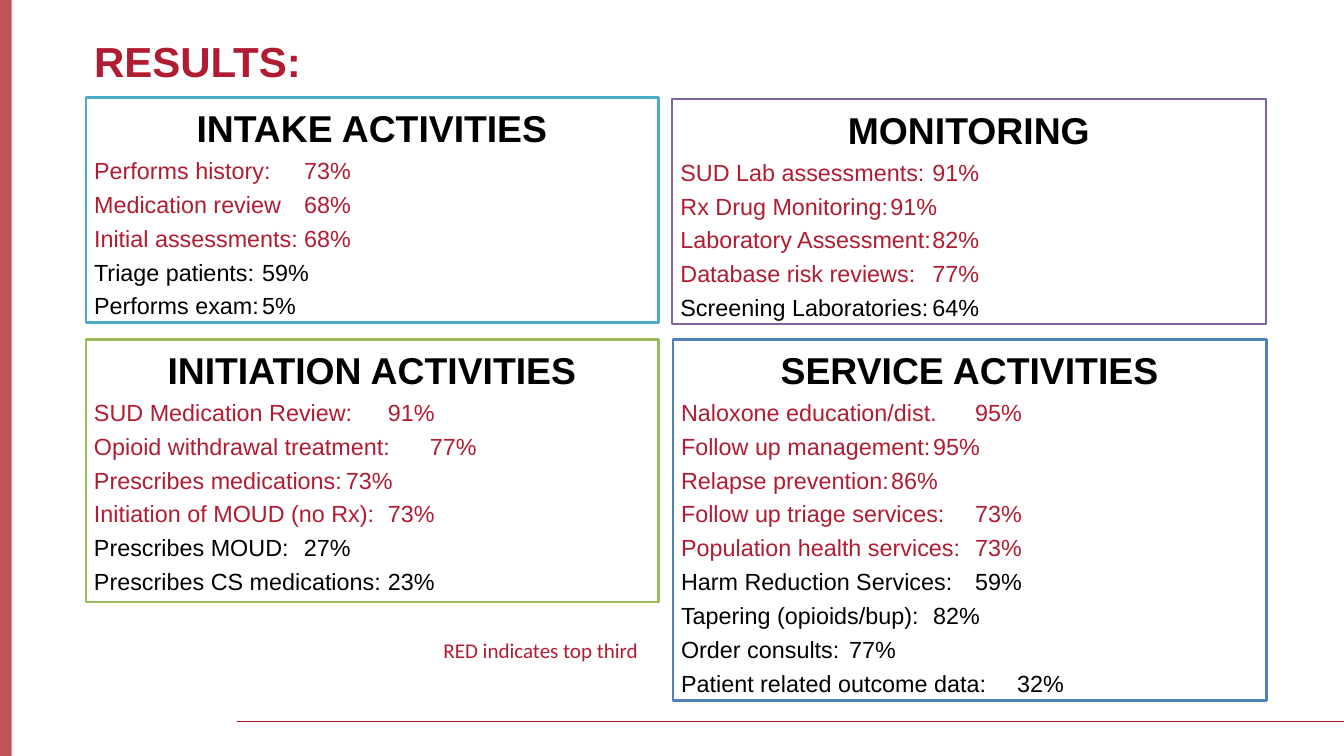
"""Build the results slide: four bordered panels of activity percentages."""
from lxml import etree
from pptx import Presentation
from pptx.dml.color import RGBColor
from pptx.enum.shapes import MSO_CONNECTOR, MSO_SHAPE
from pptx.enum.text import MSO_ANCHOR, MSO_AUTO_SIZE, PP_ALIGN
from pptx.oxml.ns import qn
from pptx.util import Pt

RECT, STRAIGHT = MSO_SHAPE.RECTANGLE, MSO_CONNECTOR.STRAIGHT
TOP, MIDDLE = MSO_ANCHOR.TOP, MSO_ANCHOR.MIDDLE
LEFT, CENTER = PP_ALIGN.LEFT, PP_ALIGN.CENTER
NO_FIT = MSO_AUTO_SIZE.NONE

COLORS = {"red": "B01C32", "black": "000000", "white": "FFFFFF", "bar": "AF282C",
          "rule": "A21727", "teal": "4BACC6", "purple": "8064A2",
          "green": "9BBB59", "blue": "4F81BD"}

TITLE = "RESULTS:"
NOTE = "RED indicates top third"
PANELS = [
    {"heading": "INTAKE ACTIVITIES", "line": "teal", "box": (73.44, 83.52, 491, 193),
     "top_third": 3,
     "rows": [("Performs history:", "73%"), ("Medication review", "68%"),
              ("Initial assessments:", "68%"), ("Triage patients:", "59%"),
              ("Performs exam:", "5%")]},
    {"heading": "MONITORING", "line": "purple", "box": (576, 84.96, 509, 193),
     "top_third": 4,
     "rows": [("SUD Lab assessments:", "91%"), ("Rx Drug Monitoring:", "91%"),
              ("Laboratory Assessment:", "82%"), ("Database risk reviews:", "77%"),
              ("Screening Laboratories:", "64%")]},
    {"heading": "INITIATION ACTIVITIES", "line": "green", "box": (73.44, 290.88, 491, 225.4),
     "top_third": 4,
     "rows": [("SUD Medication Review:", "91%"), ("Opioid withdrawal treatment: ", "77%"),
              ("Prescribes medications:", "73%"), ("Initiation of MOUD (no Rx):", "73%"),
              ("Prescribes MOUD:", "27%"), ("Prescribes CS medications:", "23%")]},
    {"heading": "SERVICE ACTIVITIES", "line": "blue", "box": (576.72, 290.88, 509, 309.6),
     "top_third": 5,
     "rows": [("Naloxone education/dist.", "95%"), ("Follow up management:", "95%"),
              ("Relapse prevention:", "86%"), ("Follow up triage services:", "73%"),
              ("Population health services:", "73%"), ("Harm Reduction Services:", "59%"),
              ("Tapering (opioids/bup):", "82%"), ("Order consults:", "77%"),
              ("Patient related outcome data:", "32%")]},
]

TAB_STEP, TAB_COUNT = 43.2, 10
ROW_GAP = 5
HEADING = {"name": "Arial", "size": Pt(32), "bold": True}
ROW = {"name": "Arial", "size": Pt(20), "bold": False}


def rgb(key):
    return RGBColor.from_string(COLORS[key])


def place(s, box):
    for name, value in zip(("left", "top", "width", "height"), box):
        setattr(s, name, Pt(value))


def set_frame(tf, anchor, top=3.6, wrap=True):
    frame = {"word_wrap": wrap, "auto_size": NO_FIT, "vertical_anchor": anchor,
             "margin_left": Pt(7.2), "margin_right": Pt(7.2),
             "margin_top": Pt(top), "margin_bottom": Pt(3.6)}
    for name, value in frame.items():
        setattr(tf, name, value)


def write(p, text, color, font, align=LEFT):
    p.alignment = align
    r = p.add_run()
    r.text = text
    for name, value in font.items():
        setattr(r.font, name, value)
    r.font.color.rgb = rgb(color)


def plain_paragraph(p, gap, tabs):
    pPr = p._p.get_or_add_pPr()
    pPr.set("marL", "0")
    pPr.set("indent", "0")
    etree.SubElement(pPr, qn("a:buNone"))
    if tabs:
        tab_list = etree.SubElement(pPr, qn("a:tabLst"))
        for i in range(1, TAB_COUNT + 1):
            etree.SubElement(tab_list, qn("a:tab"), pos=str(Pt(TAB_STEP * i)), algn="l")
    p.space_before = Pt(gap)


def fill_panel(s, panel):
    place(s, panel["box"])
    s.fill.solid()
    s.fill.fore_color.rgb = rgb("white")
    s.line.color.rgb = rgb(panel["line"])
    s.line.width = Pt(2)
    tf = s.text_frame
    set_frame(tf, TOP, top=7)
    p = tf.paragraphs[0]
    plain_paragraph(p, 0, False)
    write(p, panel["heading"], "black", HEADING, CENTER)
    for i, row in enumerate(panel["rows"]):
        p = tf.add_paragraph()
        plain_paragraph(p, ROW_GAP, True)
        write(p, "\t".join(row), "red" if i < panel["top_third"] else "black", ROW)


def add_rect(slide, box):
    s = slide.shapes.add_shape(RECT, *map(Pt, box))
    s.shadow.inherit = False
    return s


def main():
    prs = Presentation()
    prs.slide_width, prs.slide_height = Pt(1152), Pt(648)
    slide = prs.slides.add_slide(prs.slide_layouts[3])

    bar = add_rect(slide, (0, 0, 10, 648))
    bar.fill.solid()
    bar.fill.fore_color.rgb = rgb("bar")
    bar.line.fill.background()
    bar_color = bar.fill._xPr.find(qn("a:solidFill"))[0]
    etree.SubElement(bar_color, qn("a:alpha"), val="80000")

    rule = slide.shapes.add_connector(STRAIGHT, Pt(203), Pt(618.5), Pt(1152), Pt(618.5))
    rule.line.color.rgb = rgb("rule")
    rule.line.width = Pt(1)
    etree.SubElement(rule._element.spPr, qn("a:effectLst"))

    title = slide.shapes.title
    place(title, (73.44, 26, 1011.6, 52))
    set_frame(title.text_frame, MIDDLE)
    write(title.text_frame.paragraphs[0], TITLE, "red",
          {"name": "Arial", "size": Pt(36), "bold": True})

    bodies = [slide.placeholders[1], slide.placeholders[2]]
    for i, panel in enumerate(PANELS):
        s = bodies[i] if i < len(bodies) else add_rect(slide, panel["box"])
        fill_panel(s, panel)

    note = slide.shapes.add_textbox(Pt(373), Pt(543), Pt(184), Pt(29))
    set_frame(note.text_frame, TOP, wrap=False)
    write(note.text_frame.paragraphs[0], NOTE, "red", {"name": "Calibri", "size": Pt(18)})

    prs.save("out.pptx")


if __name__ == "__main__":
    main()
